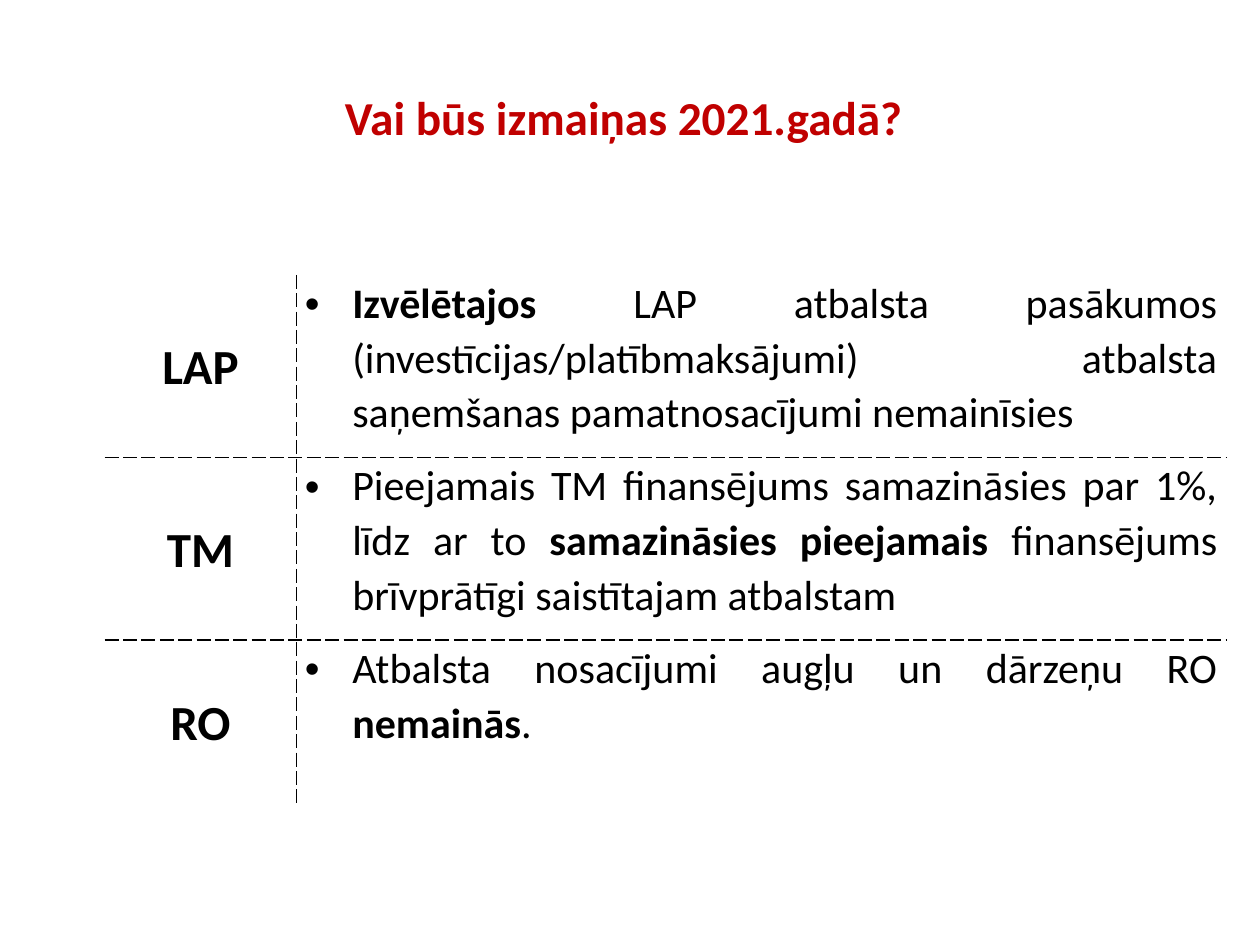
from dataclasses import dataclass

from lxml import etree
from pptx import Presentation
from pptx.dml.color import RGBColor
from pptx.enum import text
from pptx.oxml import ns
from pptx.util import Pt

COLORS = {"title": "C00000", "ink": "000000"}
FONT = "Calibri"
COLUMN_WIDTHS = (109.5, 531.3)
INDENT = Pt(27)


@dataclass
class Run:
    text: str
    bold: bool = False


@dataclass
class Topic:
    label: str
    height: float
    runs: list[Run]


TOPICS = [
    Topic("LAP", 104.4, [
        Run("Izvēlētajos", True),
        Run(" LAP atbalsta pasākumos (investīcijas/platībmaksājumi) atbalsta "
            "saņemšanas pamatnosacījumi nemainīsies"),
    ]),
    Topic("TM", 104.4, [
        Run("Pieejamais TM finansējums samazināsies par 1%, līdz ar to "),
        Run("samazināsies pieejamais ", True),
        Run("finansējums brīvprātīgi saistītajam atbalstam"),
    ]),
    Topic("RO", 93.7, [
        Run("Atbalsta nosacījumi augļu un dārzeņu RO "),
        Run("nemainās", True),
        Run("."),
    ]),
]


def add_runs(p, runs: list[Run], size: float, color: str) -> None:
    for run in runs:
        r = p.add_run()
        r.text = run.text
        r.font.name = FONT
        r.font.size = Pt(size)
        r.font.bold = run.bold
        r.font.color.rgb = RGBColor.from_string(COLORS[color])


def sub(parent, tag: str, **attrs: str):
    return etree.SubElement(parent, ns.qn(tag), attrs)


def set_borders(cell, dashed: str) -> None:
    """Dash the sides named in dashed (of "LRTB") and hide the others."""
    tc_pr = cell._tc.get_or_add_tcPr()
    for side in "LRTB":
        ln = sub(tc_pr, f"a:ln{side}", w=str(Pt(1)))
        if side in dashed:
            sub(sub(ln, "a:solidFill"), "a:srgbClr", val=COLORS["ink"])
            sub(ln, "a:prstDash", val="dash")
        else:
            sub(ln, "a:noFill")


def set_bullet(p) -> None:
    p_pr = p._p.get_or_add_pPr()
    p_pr.set("marL", str(INDENT))
    p_pr.set("indent", str(-INDENT))
    sub(p_pr, "a:buFont", typeface="Arial")
    sub(p_pr, "a:buChar", char="•")


def style_cell(cell, dashed: str, align):
    """Set the cell's frame and return its paragraph."""
    set_borders(cell, dashed)
    cell.fill.background()
    cell.margin_left = cell.margin_right = Pt(5)
    cell.margin_top = cell.margin_bottom = 0
    p = cell.text_frame.paragraphs[0]
    p.alignment = align
    p.line_spacing = 1.07
    return p


def add_title(s, title: str) -> None:
    sp = s.shapes.add_textbox(Pt(190), Pt(46.8), Pt(481.7), Pt(58.3))
    tf = sp.text_frame
    tf.word_wrap = True
    add_runs(tf.paragraphs[0], [Run(title, True)], 27, "title")


def add_topics(s, topics: list[Topic]) -> None:
    table = s.shapes.add_table(
        len(topics), len(COLUMN_WIDTHS), Pt(59.8), Pt(157),
        Pt(sum(COLUMN_WIDTHS)), Pt(sum(t.height for t in topics))).table
    table.first_row = table.horz_banding = False
    for column, width in zip(table.columns, COLUMN_WIDTHS):
        column.width = Pt(width)
    for i, topic in enumerate(topics):
        table.rows[i].height = Pt(topic.height)
        rules = ("T" if i > 0 else "") + ("B" if i < len(topics) - 1 else "")

        label = table.cell(i, 0)
        p = style_cell(label, "R" + rules, text.PP_ALIGN.CENTER)
        label.vertical_anchor = text.MSO_ANCHOR.MIDDLE
        add_runs(p, [Run(topic.label, True)], 28, "ink")

        p = style_cell(table.cell(i, 1), "L" + rules, text.PP_ALIGN.JUSTIFY)
        p.space_after = Pt(8)
        set_bullet(p)
        add_runs(p, topic.runs, 24, "ink")


def main() -> None:
    prs = Presentation()
    prs.slide_width, prs.slide_height = Pt(720), Pt(540)
    s = prs.slides.add_slide(prs.slide_layouts[6])
    add_title(s, "Vai būs izmaiņas 2021.gadā?")
    add_topics(s, TOPICS)
    prs.save("out.pptx")


if __name__ == "__main__":
    main()
